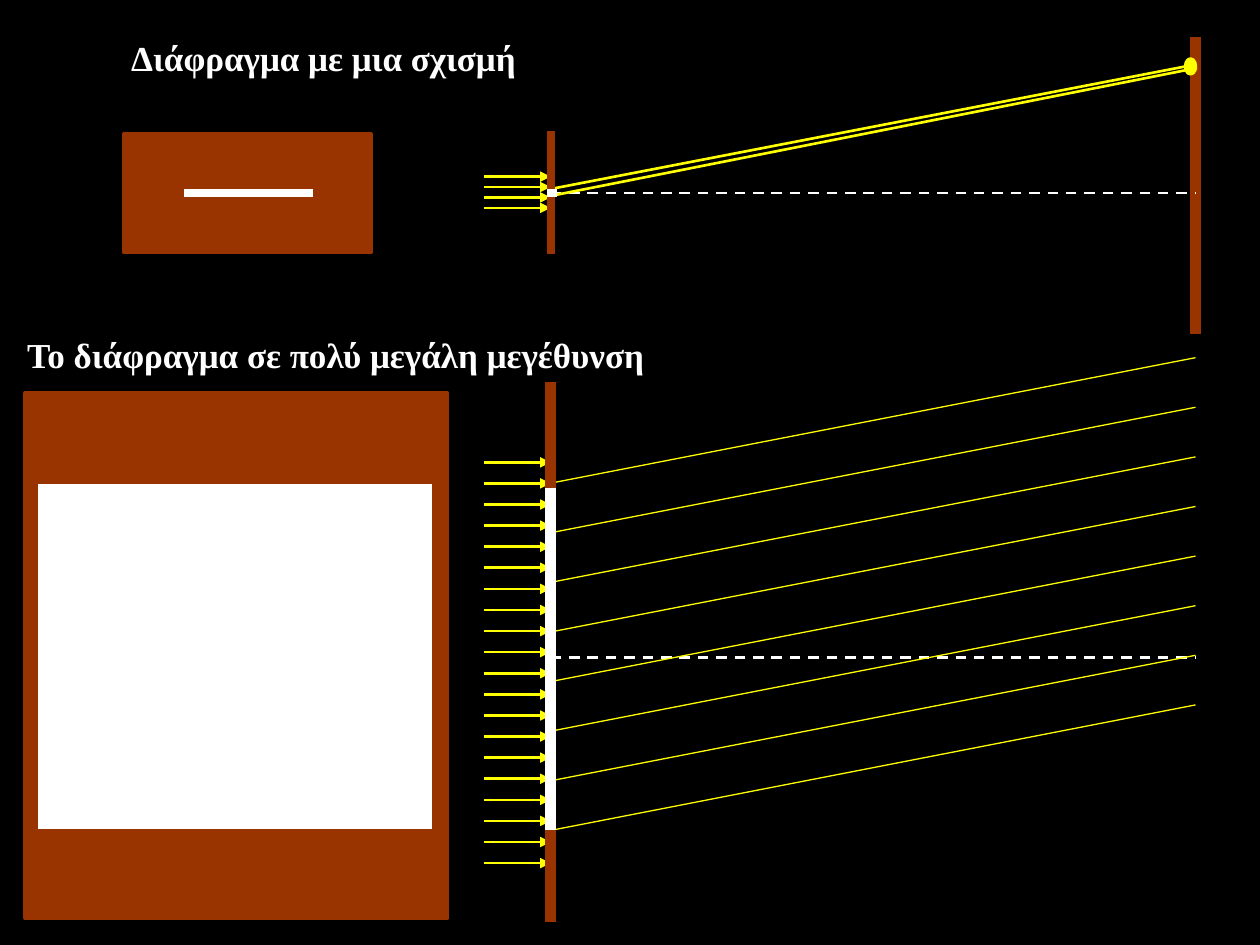
import pptx
import pptx.dml.color
import pptx.enum.dml
import pptx.enum.shapes
import pptx.enum.text
import pptx.oxml.ns
import pptx.util
from lxml import etree
from pptx.util import Cm

COLORS = {"background": "000000", "screen": "993300", "light": "FFFF00", "white": "FFFFFF"}
RGB = {name: pptx.dml.color.RGBColor.from_string(code) for name, code in COLORS.items()}
SHAPE = pptx.enum.shapes.MSO_SHAPE

presentation = pptx.Presentation()
presentation.slide_width = Cm(25.4)
presentation.slide_height = Cm(19.05)
slide = presentation.slides.add_slide(presentation.slide_layouts[5])
slide.background.fill.solid()
slide.background.fill.fore_color.rgb = RGB["background"]


def add_line(x1, y1, x2, y2, color, width, dashed=False, arrow=False):
    connector = slide.shapes.add_connector(
        pptx.enum.shapes.MSO_CONNECTOR.STRAIGHT, Cm(x1), Cm(y1), Cm(x2), Cm(y2))
    connector.line.color.rgb = RGB[color]
    connector.line.width = pptx.util.Pt(width)
    if dashed:
        connector.line.dash_style = pptx.enum.dml.MSO_LINE.DASH
    if arrow:
        line_xml = connector.line._get_or_add_ln()
        etree.SubElement(line_xml, pptx.oxml.ns.qn("a:tailEnd"), type="triangle")
    etree.SubElement(connector._element.spPr, pptx.oxml.ns.qn("a:effectLst"))


def write_text(shape, text, size=20, color="white", font="Times New Roman", bold=True):
    frame = shape.text_frame
    frame.word_wrap = True
    frame.auto_size = pptx.enum.text.MSO_AUTO_SIZE.SHAPE_TO_FIT_TEXT
    frame.vertical_anchor = pptx.enum.text.MSO_ANCHOR.TOP
    paragraph = frame.paragraphs[0]
    paragraph.alignment = pptx.enum.text.PP_ALIGN.LEFT
    run = paragraph.add_run()
    run.text = text
    run.font.size = pptx.util.Pt(size)
    run.font.name = font
    run.font.bold = bold
    run.font.color.rgb = RGB[color]


# Headings
title = slide.shapes.title
title.left, title.top, title.width, title.height = Cm(2.39), Cm(0.61), Cm(8.51), Cm(1.12)
write_text(title, "Διάφραγμα με μια σχισμή")
heading = slide.shapes.add_textbox(Cm(0.3), Cm(6.6), Cm(13), Cm(1.12))
write_text(heading, "Το διάφραγμα σε πολύ μεγάλη μεγέθυνση")

# Front views of the diaphragm, the magnified opening and the spot on the screen
for kind, left, top, width, height, fill, outline in [
    (SHAPE.RECTANGLE, 2.49, 2.69, 5, 2.39, "screen", "screen"),
    (SHAPE.RECTANGLE, 0.51, 7.92, 8.51, 10.59, "screen", "screen"),
    (SHAPE.RECTANGLE, 0.74, 9.73, 8, 7.01, "white", "screen"),
]:
    shape = slide.shapes.add_shape(kind, Cm(left), Cm(top), Cm(width), Cm(height))
    shape.shadow.inherit = False
    shape.fill.solid()
    shape.fill.fore_color.rgb = RGB[fill]
    shape.line.color.rgb = RGB[outline]
    shape.line.width = pptx.util.Pt(2)
add_line(3.71, 3.89, 6.3, 3.89, "white", 4.5)

# Screen and the optical axes
diaphragm_x, screen_x = 11.1, 24.1
add_line(screen_x, 0.74, screen_x, 6.73, "screen", 6)
for axis_y in (3.89, 13.26):
    add_line(diaphragm_x, axis_y, screen_x, axis_y, "white", 1.5, dashed=True)

# Rays leaving the slit
ray_count, ray_step, ray_rise = 8, 1, 2.53
for index in range(ray_count):
    ray_y = 9.74 + index * ray_step
    add_line(diaphragm_x, ray_y, screen_x, ray_y - ray_rise, "light", 0.75)
add_line(11.15, 3.94, 24.13, 1.37, "light", 1.5)
add_line(diaphragm_x, 3.81, screen_x, 1.3, "light", 1.5)
spot = slide.shapes.add_shape(SHAPE.OVAL, Cm(23.9), Cm(1.19), Cm(0.2), Cm(0.3))
spot.shadow.inherit = False
spot.fill.solid()
spot.fill.fore_color.rgb = RGB["light"]
spot.line.color.rgb = RGB["light"]
spot.line.width = pptx.util.Pt(2)

# Incoming light
for first_y, last_y, count in [(3.56, 4.19, 4), (9.32, 17.4, 20)]:
    for index in range(count):
        arrow_y = first_y + index * (last_y - first_y) / (count - 1)
        add_line(9.75, arrow_y, diaphragm_x, arrow_y, "light", 1.5, arrow=True)

# Side views of the diaphragm with its opening
add_line(diaphragm_x, 2.64, diaphragm_x, 5.13, "screen", 4.5)
add_line(11.02, 3.89, 11.23, 3.89, "white", 4.5)
add_line(diaphragm_x, 7.7, diaphragm_x, 18.59, "screen", 6)
add_line(diaphragm_x, 9.83, diaphragm_x, 16.74, "white", 6)

presentation.save("out.pptx")
